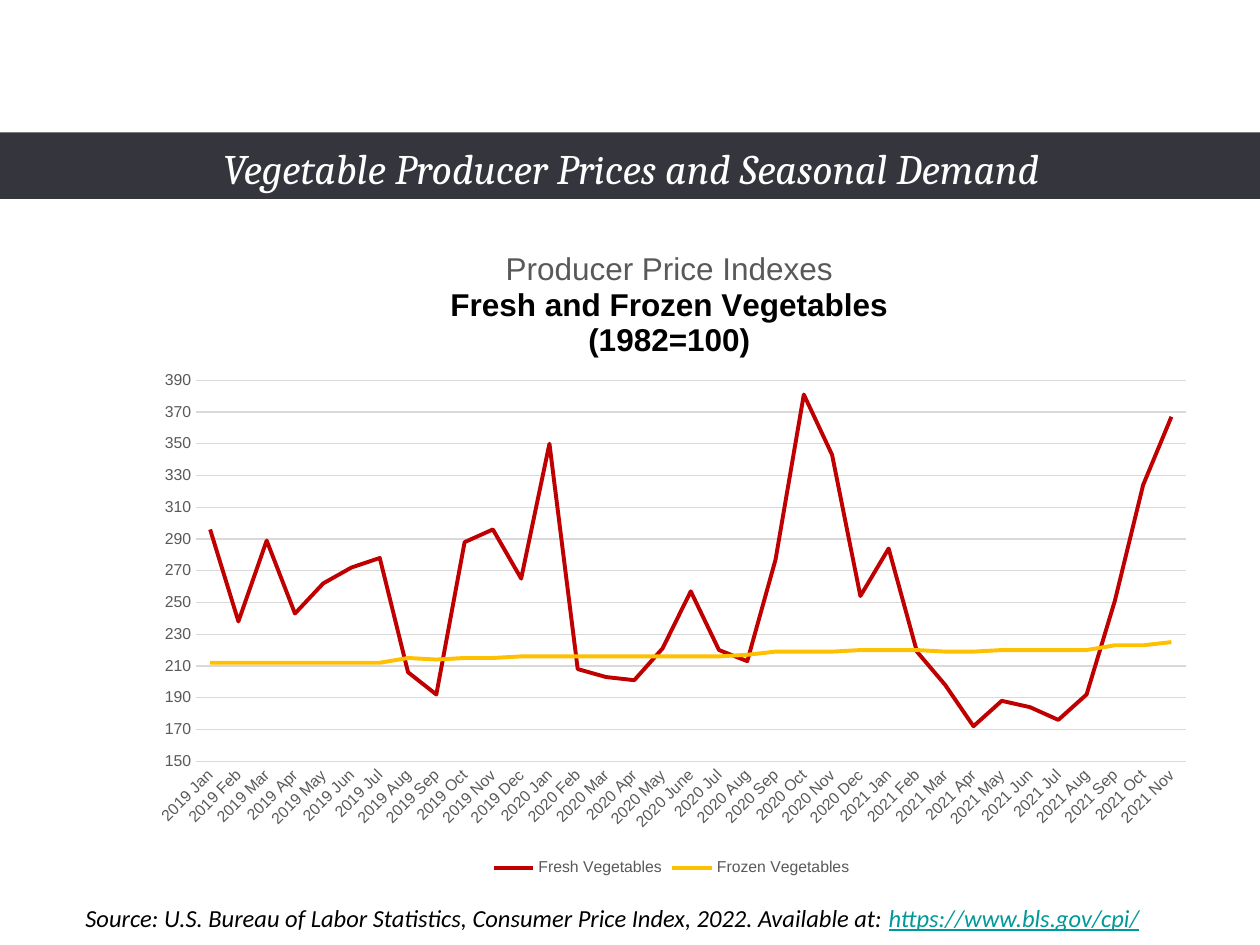
import pptx
import pptx.chart.data
import pptx.dml.color
import pptx.enum.chart
import pptx.enum.shapes
import pptx.enum.text
import pptx.oxml
import pptx.oxml.ns
import pptx.util

WIDTH, HEIGHT = 10, 7.5
GREY, RULE, BLACK = "595959", "D9D9D9", "000000"

MONTHS = "Jan Feb Mar Apr May Jun Jul Aug Sep Oct Nov Dec".split()
FRESH = [296, 238, 289, 243, 262, 272, 278, 206, 192, 288, 296, 265,
         350, 208, 203, 201, 221, 257, 220, 213, 277, 381, 343, 254,
         284, 219, 198, 172, 188, 184, 176, 192, 251, 324, 367]
FROZEN = [212] * 7 + [215, 214, 215, 215] + [216] * 8 + [
    217, 219, 219, 219, 220, 220, 220, 219, 219, 220, 220, 220, 220, 223, 223, 225]
SERIES = [("Fresh Vegetables", FRESH, "C00000"),
          ("Frozen Vegetables", FROZEN, "FFC000")]


def color(value):
    return pptx.dml.color.RGBColor.from_string(value)


def frame(left, top, width, height):
    """Turn shares of the slide's size into lengths."""
    return [pptx.util.Inches(round(share * size, 2)) for share, size in
            zip((left, top, width, height), (WIDTH, HEIGHT) * 2)]


def style(font, name, size, value, bold=False, italic=False):
    font.name, font.size = name, pptx.util.Pt(size)
    font.bold, font.italic = bold, italic
    font.color.rgb = color(value)


def add_span(para, text, *look, **flags):
    span = para.add_run()
    span.text = text
    style(span.font, *look, **flags)
    return span


def add_band(page):
    band = page.shapes.add_shape(pptx.enum.shapes.MSO_SHAPE.RECTANGLE,
                                 *frame(0, 0.14, 1, 0.07))
    band.shadow.inherit = False
    band.fill.solid()
    band.fill.fore_color.rgb = color("35353D")
    band.line.fill.background()


def set_title(page, text):
    title = page.shapes.title
    title.left, title.top, title.width, title.height = frame(0.167, 0.144, 0.733, 0.067)
    # Bring the placeholder in front of the band
    title.element.getparent().append(title.element)
    box = title.text_frame
    box.auto_size = pptx.enum.text.MSO_AUTO_SIZE.NONE
    box.vertical_anchor = pptx.enum.text.MSO_ANCHOR.TOP
    para = box.paragraphs[0]
    para.alignment = pptx.enum.text.PP_ALIGN.LEFT
    add_span(para, text, "Cambria", 24, "FFFFFF", italic=True)


def add_source(page, text, address):
    box = page.shapes.add_textbox(*frame(0.058, 0.933, 0.883, 0.056)).text_frame
    box.word_wrap = True
    para = box.paragraphs[0]
    para.line_spacing, para.space_after = 1.5, pptx.util.Pt(8)
    add_span(para, text, "Calibri", 14, BLACK, italic=True)
    link = add_span(para, address, "Calibri", 14, "009999", italic=True)
    link.font.underline = True


def place_part(part, **shares):
    """Give a chart part a fixed place, in shares of the chart's size."""
    old = part.find(pptx.oxml.ns.qn("c:layout"))
    if old is not None:
        part.remove(old)
    modes = "".join(f'<c:{axis}Mode val="edge"/>' for axis in "xy")
    values = "".join(f'<c:{key} val="{share}"/>' for key, share in shares.items())
    target = '<c:layoutTarget val="inner"/>' if "w" in shares else ""
    layout = pptx.oxml.parse_xml(
        f'<c:layout {pptx.oxml.ns.nsdecls("c")}><c:manualLayout>'
        f'{target}{modes}{values}</c:manualLayout></c:layout>')
    # A title's layout follows its text; a plot area's comes first
    part.insert(1 if part.tag.endswith("title") else 0, layout)


def draw_rule(line):
    line.color.rgb = color(RULE)
    line.width = pptx.util.Pt(0.75)


def style_axes(chart):
    tick = pptx.enum.chart.XL_TICK_MARK.NONE
    months, index = chart.category_axis, chart.value_axis
    for axis in (months, index):
        axis.major_tick_mark = axis.minor_tick_mark = tick
        style(axis.tick_labels.font, "Arial", 9, GREY)
    draw_rule(months.format.line)
    months.has_major_gridlines = False
    # Slant the month labels by 45 degrees
    slant = months.tick_labels.font and months._element.find(
        ".//" + pptx.oxml.ns.qn("a:bodyPr"))
    slant.set("rot", "-2700000")
    slant.set("vert", "horz")
    index.format.line.fill.background()
    index.minimum_scale, index.maximum_scale, index.major_unit = 150, 390, 20
    index.has_major_gridlines = True
    draw_rule(index.major_gridlines.format.line)


def add_price_chart(page):
    data = pptx.chart.data.CategoryChartData()
    labels = [f"{year} {month}" for year in (2019, 2020, 2021) for month in MONTHS]
    labels[labels.index("2020 Jun")] = "2020 June"
    data.categories = labels[:len(FRESH)]
    for name, values, _ in SERIES:
        data.add_series(name, values)
    chart = page.shapes.add_chart(pptx.enum.chart.XL_CHART_TYPE.LINE,
                                  *frame(0.108, 0.232, 0.85, 0.701), data).chart
    style(chart.font, "Arial", 10, BLACK)

    # Three-line heading
    chart.has_title = True
    heading = chart.chart_title.text_frame
    lines = [("Producer Price Indexes", GREY, False),
             ("Fresh and Frozen Vegetables", BLACK, True),
             ("(1982=100)", BLACK, True)]
    for number, (text, value, bold) in enumerate(lines):
        para = heading.add_paragraph() if number else heading.paragraphs[0]
        add_span(para, text, "Arial", 18, value, bold=bold)
    chart.chart_title.include_in_layout = False

    # Lines, axes and legend
    chart.plots[0].vary_by_categories = False
    for line, (_, _, value) in zip(chart.plots[0].series, SERIES):
        line.smooth = False
        line.marker.style = pptx.enum.chart.XL_MARKER_STYLE.NONE
        line.format.line.color.rgb = color(value)
        line.format.line.width = pptx.util.Pt(2.25)
    style_axes(chart)
    chart.has_legend = True
    chart.legend.position = pptx.enum.chart.XL_LEGEND_POSITION.BOTTOM
    chart.legend.include_in_layout = False
    style(chart.legend.font, "Arial", 9, GREY)

    place_part(chart.chart_title._element, x=0.29, y=0.04)
    plot_area = chart.category_axis._element.getparent()
    place_part(plot_area, x=0.056, y=0.243, w=0.924, h=0.575)


def main():
    deck = pptx.Presentation()
    deck.slide_width = pptx.util.Inches(WIDTH)
    deck.slide_height = pptx.util.Inches(HEIGHT)
    page = deck.slides.add_slide(deck.slide_layouts.get_by_name("Title Only"))
    add_band(page)
    add_price_chart(page)
    add_source(page, "Source: U.S. Bureau of Labor Statistics, Consumer Price Index, "
               "2022. Available at: ", "https://www.bls.gov/cpi/")
    set_title(page, "Vegetable Producer Prices and Seasonal Demand")
    deck.save("out.pptx")


if __name__ == "__main__":
    main()
